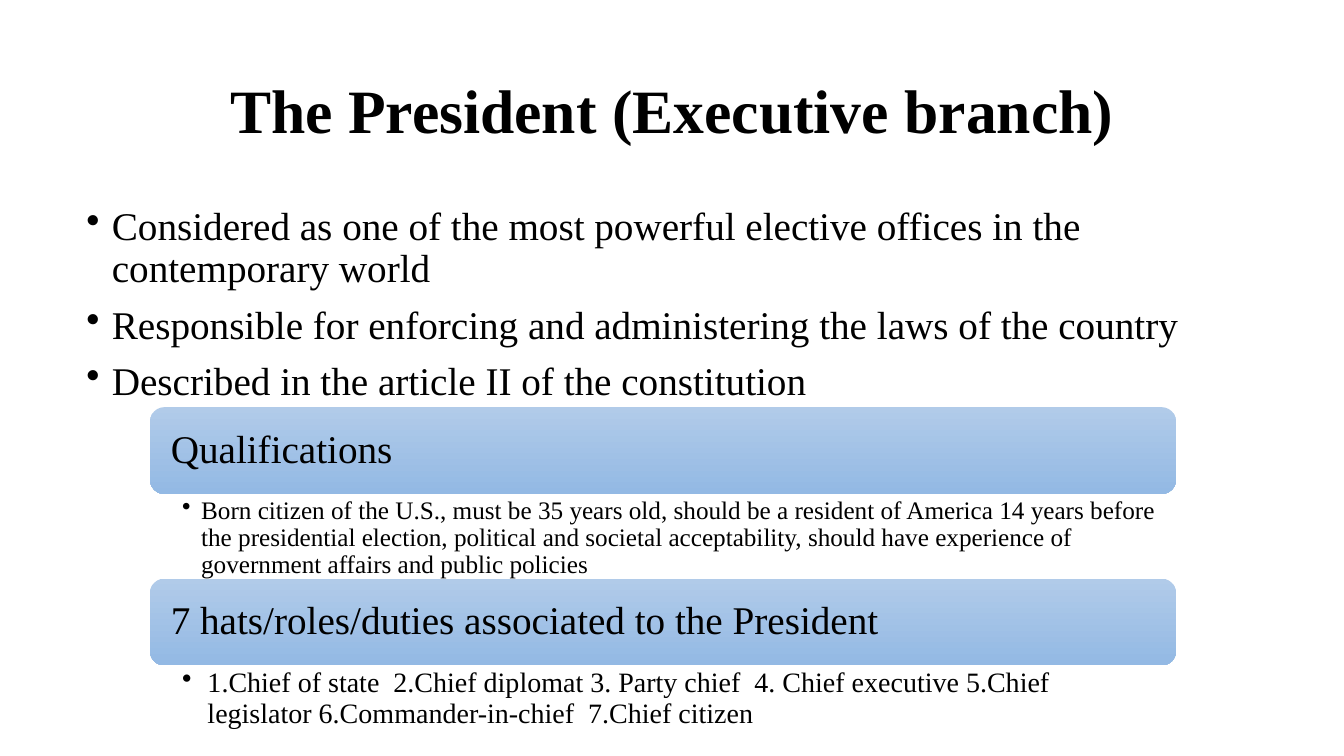
import pptx
import pptx.util
import pptx.dml.color
import pptx.enum.shapes
import pptx.enum.text
import pptx.oxml
import pptx.oxml.ns

Cm = pptx.util.Cm
Pt = pptx.util.Pt
ALIGN = pptx.enum.text.PP_ALIGN
ANCHOR = pptx.enum.text.MSO_ANCHOR

POINTS = [
    "Considered as one of the most powerful elective offices in the contemporary world",
    "Responsible for enforcing and administering the laws of the country",
    "Described in the article II of the constitution",
]
PARTS = [
    ("Qualifications",
     "Born citizen of the U.S., must be 35 years old, should be a resident of America "
     "14 years before the presidential election, political and societal acceptability, "
     "should have experience of government affairs and public policies",
     18, 0.48),
    ("7 hats/roles/duties associated to the President",
     "1.Chief of state  2.Chief diplomat 3. Party chief  4. Chief executive 5.Chief "
     "legislator 6.Commander-in-chief  7.Chief citizen",
     20, 0.64),
]


def color(code):
    return pptx.dml.color.RGBColor.from_string(code)


def bullet(para, indent):
    props = para._p.get_or_add_pPr()
    props.set("marL", str(Cm(indent)))
    props.set("indent", str(-Cm(indent)))
    mark = pptx.oxml.parse_xml(
        f'<a:buChar {pptx.oxml.ns.nsdecls("a")} char="•"/>')
    props.append(mark)


def write(shape, *lines, size=28, bold=False, align=ALIGN.LEFT, anchor=ANCHOR.TOP,
          before=0, indent=0, inset=(0.25, 0.13, 0.25, 0.13)):
    frame = shape.text_frame
    frame.word_wrap = True
    frame.vertical_anchor = anchor
    (frame.margin_left, frame.margin_top,
     frame.margin_right, frame.margin_bottom) = map(Cm, inset)
    for i, line in enumerate(lines):
        para = frame.add_paragraph() if i else frame.paragraphs[0]
        para.alignment = align
        para.line_spacing = 0.9
        para.space_before = Pt(before)
        if indent:
            bullet(para, indent)
        run = para.add_run()
        run.text = line
        run.font.name = "Times New Roman"
        run.font.size = Pt(size)
        run.font.bold = bold
        run.font.color.rgb = color("000000")


def box(slide, *place):
    return slide.shapes.add_textbox(*map(Cm, place))


def bar(slide, *place):
    kind = pptx.enum.shapes.MSO_SHAPE.ROUNDED_RECTANGLE
    shape = slide.shapes.add_shape(kind, *map(Cm, place))
    shape.shadow.inherit = False
    shape.line.fill.background()
    shape.fill.gradient()
    shape.fill.gradient_angle = 270
    for stop, code in zip(shape.fill.gradient_stops, ("B1CBE9", "93B9E4")):
        stop.color.rgb = color(code)
    return shape


def main():
    deck = pptx.Presentation()
    deck.slide_width, deck.slide_height = Cm(33.87), Cm(19.05)
    slide = deck.slides.add_slide(deck.slide_layouts[6])

    write(box(slide, 2.34, 1.02, 29.21, 3.68), "The President (Executive branch)",
          size=44, bold=True, align=ALIGN.CENTER, anchor=ANCHOR.MIDDLE)
    write(box(slide, 1.93, 5.08, 29.59, 13.61), *POINTS, before=10, indent=0.64)

    left, top, width, height, step = 3.78, 10.26, 25.86, 2.19, 4.32
    for i, (head, detail, size, indent) in enumerate(PARTS):
        y = top + i * step
        write(bar(slide, left, y, width, height), head,
              anchor=ANCHOR.MIDDLE, inset=(0.42, 0.3, 0.42, 0.3))
        write(box(slide, left, y + height, width, step - height), detail,
              size=size, indent=indent, inset=(0.81, 0.08, 0.41, 0.08))

    deck.save("out.pptx")


if __name__ == "__main__":
    main()
